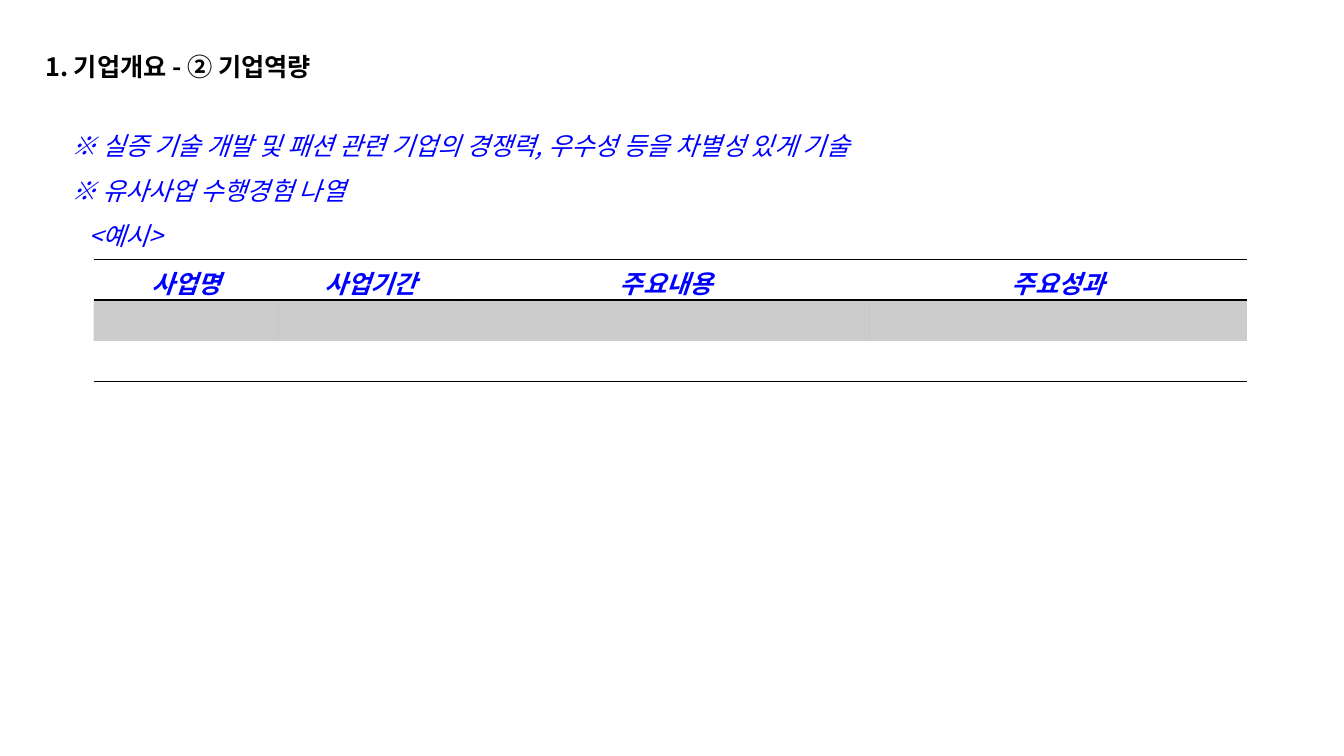
"""Build the company capability slide with its guidance notes and example table."""
from dataclasses import dataclass

from lxml import etree
from pptx import Presentation
from pptx.dml.color import RGBColor
from pptx.enum.text import MSO_AUTO_SIZE, PP_ALIGN
from pptx.oxml.ns import qn
from pptx.util import Cm, Pt

CENTER = PP_ALIGN.CENTER
GROW = MSO_AUTO_SIZE.SHAPE_TO_FIT_TEXT
PLAIN_TABLE_STYLE = "{2D5ABB26-0587-4C30-8999-92F81FD0307C}"


@dataclass(frozen=True)
class Theme:
    font: str = "Noto Sans CJK KR"
    size: Pt = Pt(18)
    black: RGBColor = RGBColor(0, 0, 0)
    blue: RGBColor = RGBColor(0, 0, 255)
    rule: Pt = Pt(1)
    band_opacity: int = 20


THEME = Theme()
TITLE = "1. 기업개요 - ② 기업역량"
NOTES = [
    "※ 실증 기술 개발 및 패션 관련 기업의 경쟁력, 우수성 등을 차별성 있게 기술",
    "※ 유사사업 수행경험 나열",
    "<예시>",
]
HEADINGS = ["사업명", "사업기간", "주요내용", "주요성과"]
COLUMN_WIDTHS = [Cm(4.65), Cm(4.65), Cm(10.26), Cm(9.5)]
ROW_HEIGHT = Cm(1.03)
ROW_COUNT = 3


def style_paragraph(paragraph, color, bold=False, italic=False):
    font = paragraph.font
    font.name, font.size = THEME.font, THEME.size
    font.bold, font.italic = bold, italic
    font.color.rgb = color
    defaults = paragraph._p.pPr.find(qn("a:defRPr"))
    etree.SubElement(defaults, qn("a:ea"), typeface=THEME.font)


def add_text(slide, left, top, width, height, lines, color, spacing=1.0, **emphasis):
    frame = slide.shapes.add_textbox(left, top, width, height).text_frame
    frame.word_wrap = True
    frame.auto_size = GROW
    frame.text = "\n".join(lines)
    for paragraph in frame.paragraphs:
        paragraph.line_spacing = spacing
        style_paragraph(paragraph, color, **emphasis)
    return frame


def add_rule(cell, edge, position):
    line = etree.Element(qn(f"a:{edge}"), w=str(THEME.rule))
    fill = etree.SubElement(line, qn("a:solidFill"))
    etree.SubElement(fill, qn("a:srgbClr"), val=str(THEME.black))
    cell._tc.get_or_add_tcPr().insert(position, line)


def shade(cell):
    cell.fill.solid()
    cell.fill.fore_color.rgb = THEME.black
    color = cell._tc.tcPr.find(f".//{qn('a:srgbClr')}")
    etree.SubElement(color, qn("a:alpha"), val=str(THEME.band_opacity * 1000))


def add_experience_table(slide, left, top):
    frame = slide.shapes.add_table(
        ROW_COUNT, len(HEADINGS), left, top,
        sum(COLUMN_WIDTHS), ROW_HEIGHT * ROW_COUNT)
    table = frame.table
    table.first_row = table.horz_banding = False
    table._tbl.tblPr.find(qn("a:tableStyleId")).text = PLAIN_TABLE_STYLE
    for row in table.rows:
        row.height = ROW_HEIGHT
    for index, (heading, width) in enumerate(zip(HEADINGS, COLUMN_WIDTHS)):
        table.columns[index].width = width
        header, band, last = (table.cell(row, index) for row in range(ROW_COUNT))
        header.text = heading
        paragraph = header.text_frame.paragraphs[0]
        paragraph.alignment = CENTER
        style_paragraph(paragraph, THEME.blue, bold=True, italic=True)
        header.fill.background()
        last.fill.background()
        shade(band)
        add_rule(header, "lnT", 0)
        add_rule(header, "lnB", 1)
        add_rule(last, "lnB", 0)


def main():
    deck = Presentation()
    deck.slide_width, deck.slide_height = Cm(33.87), Cm(19.05)
    slide = deck.slides.add_slide(deck.slide_layouts[6])
    add_text(slide, Cm(0.89), Cm(1.17), Cm(17.04), Cm(1.02),
             [TITLE], THEME.black, bold=True)
    notes = add_text(slide, Cm(1.55), Cm(2.77), Cm(31.62), Cm(7.19),
                     NOTES, THEME.blue, spacing=1.5, italic=True)
    example_label = notes.paragraphs[-1]
    example_label._p.pPr.set("marL", str(Cm(0.43)))
    add_experience_table(slide, Cm(2.36), Cm(6.53))
    deck.save("out.pptx")


if __name__ == "__main__":
    main()
